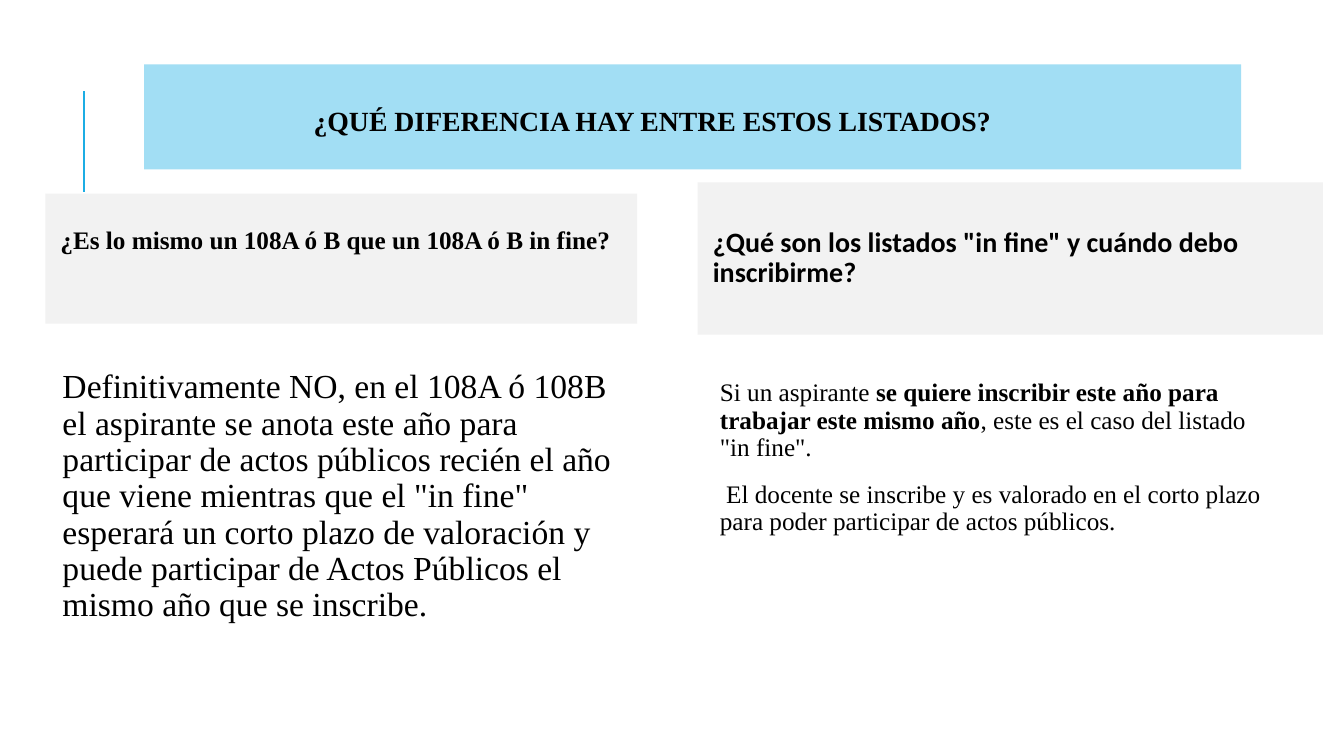
from dataclasses import dataclass

from lxml.etree import SubElement
from pptx import Presentation
from pptx.dml.color import RGBColor as Rgb
from pptx.enum.shapes import MSO_CONNECTOR as Link, MSO_SHAPE as Form
from pptx.enum.text import MSO_ANCHOR as Anchor, PP_ALIGN as Align
from pptx.oxml.ns import qn
from pptx.util import Pt

SCALE = 9144  # EMU per px, 100 px to the inch


@dataclass(frozen=True)
class Theme:
    ink: str = "000000"
    sky: str = "A2DEF4"
    gray: str = "F2F2F2"
    blue: str = "1CADE4"
    serif: str = "Times New Roman"
    sans: str = "Calibri"
    title: float = 19.8
    head: float = 20
    text: float = 18
    large: float = 24


def px(num):
    return num * SCALE


def apply(item, style):
    for key, value in style.items():
        setattr(item, key, value)


class Deck:
    def __init__(self, theme):
        self.theme = theme
        self.prs = Presentation()
        apply(self.prs, {"slide_width": px(1333), "slide_height": px(750)})
        self.slide = self.prs.slides.add_slide(self.prs.slide_layouts[6])

    def label(self, shape, paras, size, font, pad, anchor, lead=0.9):
        """Fill a shape; each paragraph is a list of (text, bold) runs."""
        frame = shape.text_frame
        sides = ("margin_left", "margin_top", "margin_right", "margin_bottom")
        apply(frame, dict(zip(sides, map(px, pad))))
        apply(frame, {"word_wrap": True, "vertical_anchor": anchor})
        for i, runs in enumerate(paras):
            para = frame.add_paragraph() if i else frame.paragraphs[0]
            apply(para, {"alignment": Align.LEFT, "line_spacing": lead,
                         "space_before": Pt(14 if i else 0)})
            for text, bold in runs:
                run = para.add_run()
                run.text = text
                apply(run.font, {"name": font, "size": Pt(size), "bold": bold})
                run.font.color.rgb = Rgb.from_string(self.theme.ink)

    def band(self, box, fill, text, size, font, pad,
             anchor=Anchor.MIDDLE, lead=0.9):
        shape = self.slide.shapes.add_shape(Form.RECTANGLE, *map(px, box))
        shape.shadow.inherit = False
        shape.fill.solid()
        shape.fill.fore_color.rgb = Rgb.from_string(fill)
        shape.line.fill.background()
        self.label(shape, [[(text, True)]], size, font, pad, anchor, lead)

    def body(self, box, paras, size, pad):
        shape = self.slide.shapes.add_textbox(*map(px, box))
        self.label(shape, paras, size, self.theme.serif, pad, Anchor.TOP)

    def rule(self, ends, color, width):
        line = self.slide.shapes.add_connector(Link.STRAIGHT, *map(px, ends))
        line.line.color.rgb = Rgb.from_string(color)
        line.line.width = Pt(width)
        SubElement(line._element.spPr, qn("a:effectLst"))


def main():
    theme = Theme()
    deck = Deck(theme)

    # Title and accent line
    deck.rule((83, 190, 83, 90), theme.blue, 1.5)
    deck.band((143, 64, 1088, 104), theme.sky,
              "¿QUÉ DIFERENCIA HAY ENTRE ESTOS LISTADOS?",
              theme.title, theme.serif, (168, 18, 10, 5), lead=0.8)

    # Left column
    deck.band((45, 192, 587, 129), theme.gray,
              "¿Es lo mismo un 108A ó B que un 108A ó B in fine?",
              theme.text, theme.serif, (15, 34, 15, 5), Anchor.TOP)
    deck.body((47, 305, 587, 381), [[(
        "Definitivamente NO, en el 108A ó 108B el aspirante se anota este año "
        "para participar de actos públicos recién el año que viene mientras "
        "que el \"in fine\" esperará un corto plazo de valoración y puede "
        "participar de Actos Públicos el mismo año que se inscribe.", False)]],
        theme.large, (15, 62, 5, 5))

    # Right column
    deck.band((692, 181, 620, 151), theme.gray,
              "¿Qué son los listados \"in fine\" y cuándo debo inscribirme?",
              theme.head, theme.sans, (15, 5, 15, 5))
    deck.body((699, 274, 568, 299), [
        [("Si un aspirante ", False),
         ("se quiere inscribir este año para trabajar este mismo año", True),
         (", este es el caso del listado \"in fine\".", False)],
        [(" El docente se inscribe y es valorado en el corto plazo para poder "
          "participar de actos públicos.", False)]],
        theme.text, (15, 103, 5, 5))

    deck.prs.save("out.pptx")


if __name__ == "__main__":
    main()
